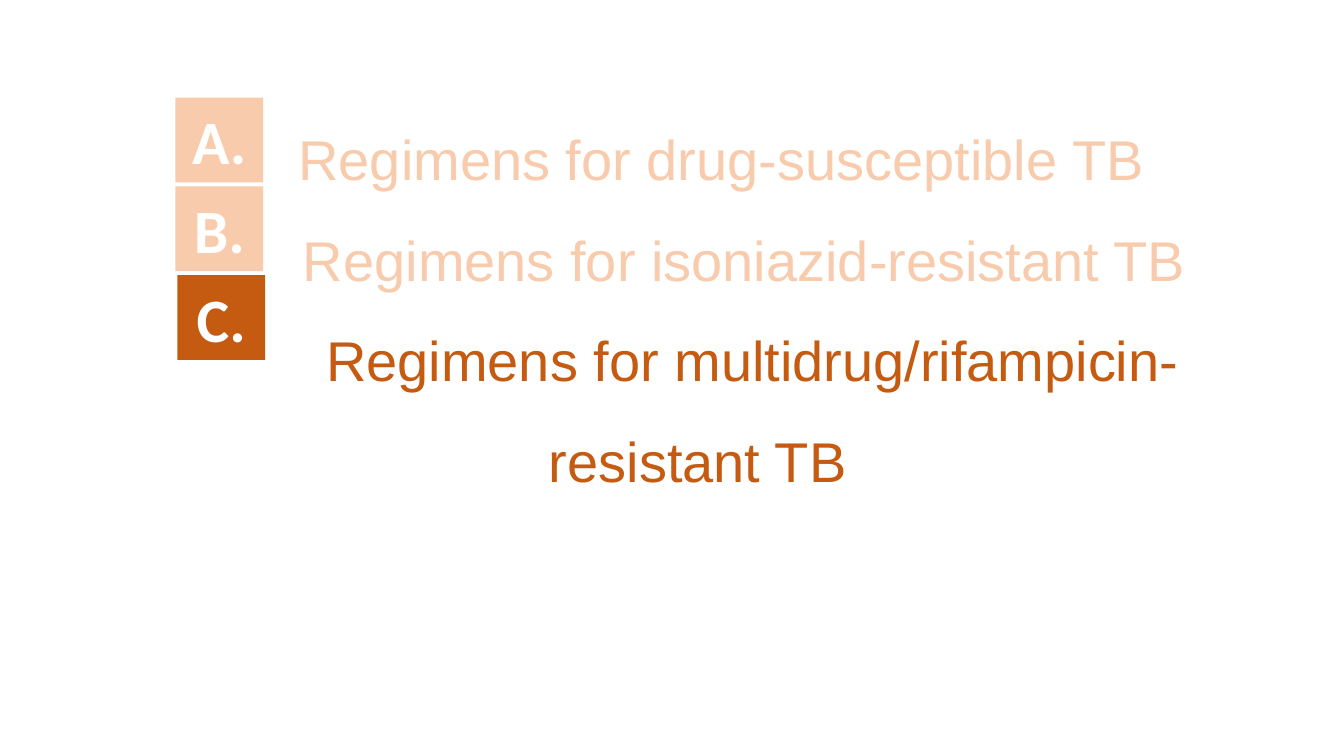
from pptx import Presentation
from pptx.dml.color import RGBColor
from pptx.enum.shapes import MSO_SHAPE as SHAPE
from pptx.enum.text import MSO_ANCHOR as ANCHOR, MSO_AUTO_SIZE as AUTO, PP_ALIGN as ALIGN
from pptx.util import Inches, Pt

COLORS = {"active": "C55A11", "muted": "F8CBAD", "white": "FFFFFF"}

# Letter, title, state, first-line indent, left edge of the tile
SECTIONS = [
    ("A.", "Regimens for drug-susceptible TB", "muted", 0.46, 1.74),
    ("B.", "Regimens for isoniazid-resistant TB", "muted", 0.92, 1.74),
    ("C.", "Regimens for multidrug/rifampicin- resistant TB", "active", 1.08, 1.76),
]
TILE_TOP, TILE_STEP = 0.97, 0.88
TILE_W, TILE_H = 0.87, 0.84


def add_run(p, text, font, size, color, bold=False):
    r = p.add_run()
    r.text = text
    r.font.name, r.font.size, r.font.bold = font, Pt(size), bold
    r.font.color.rgb = RGBColor.from_string(COLORS[color])


def fill_title(title):
    title.left, title.top = Inches(1.18), Inches(2.98)
    title.width, title.height = Inches(11.48), Inches(2.61)
    tf = title.text_frame
    tf.word_wrap, tf.auto_size = True, AUTO.NONE
    tf.vertical_anchor = ANCHOR.BOTTOM
    tf.margin_bottom = Inches(0.69)
    for i, (_, text, state, indent, _) in enumerate(SECTIONS):
        p = tf.add_paragraph() if i else tf.paragraphs[0]
        p.alignment, p.line_spacing = ALIGN.CENTER, 1.5
        p.space_before = Pt(0)
        pPr = p._p.get_or_add_pPr()
        pPr.set("marL", "0")
        pPr.set("indent", str(Inches(indent)))
        add_run(p, text, "Arial", 40, state)


def add_tile(s, letter, state, left, top):
    sp = s.shapes.add_shape(SHAPE.RECTANGLE, Inches(left), Inches(top),
                            Inches(TILE_W), Inches(TILE_H))
    sp.shadow.inherit = False
    sp.fill.solid()
    sp.fill.fore_color.rgb = RGBColor.from_string(COLORS[state])
    sp.line.fill.background()
    tf = sp.text_frame
    tf.word_wrap = True
    tf.vertical_anchor = ANCHOR.MIDDLE
    p = tf.paragraphs[0]
    p.alignment = ALIGN.CENTER
    add_run(p, letter, "Calibri", 44, "white", bold=True)


def main():
    prs = Presentation()
    prs.slide_width, prs.slide_height = Inches(13.33), Inches(7.5)
    s = prs.slides.add_slide(prs.slide_layouts[0])

    # Section titles; the subtitle is not used
    fill_title(s.shapes.title)
    subtitle = s.placeholders[1]._element
    subtitle.getparent().remove(subtitle)

    # Lettered tiles
    for i, (letter, _, state, _, left) in enumerate(SECTIONS):
        add_tile(s, letter, state, left, TILE_TOP + i * TILE_STEP)

    prs.save("out.pptx")


if __name__ == "__main__":
    main()
